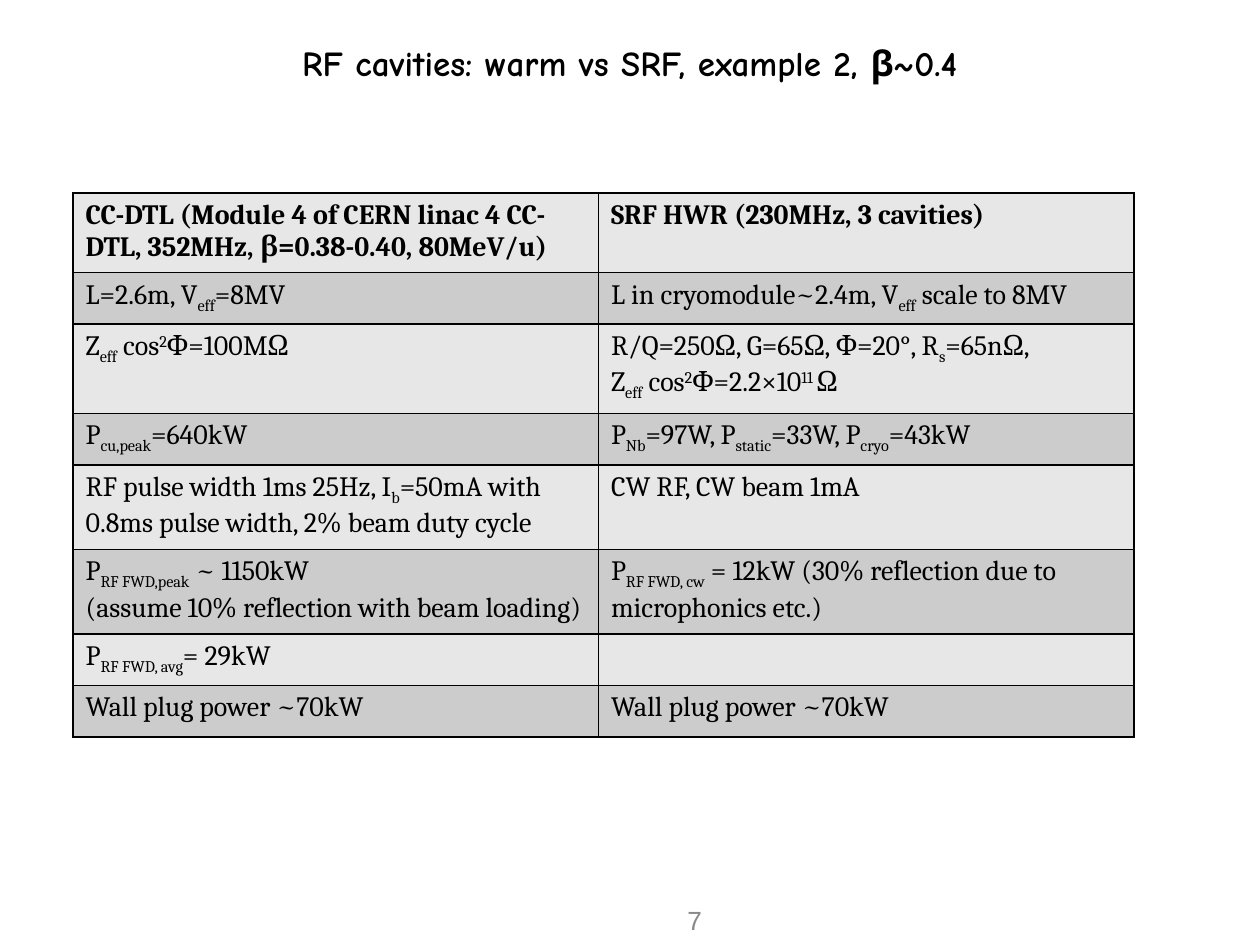
from lxml import etree
from pptx import Presentation
from pptx.dml.color import RGBColor
from pptx.enum.text import MSO_ANCHOR, MSO_AUTO_SIZE, PP_ALIGN
from pptx.oxml.ns import qn
from pptx.util import Inches, Pt

CENTER, RIGHT, LEFT = PP_ALIGN.CENTER, PP_ALIGN.RIGHT, PP_ALIGN.LEFT
MIDDLE = MSO_ANCHOR.MIDDLE
NO_AUTOFIT = MSO_AUTO_SIZE.NONE

BLACK = RGBColor(0x00, 0x00, 0x00)
GRAY = RGBColor(0x89, 0x89, 0x89)
BANDS = (RGBColor(0xE7, 0xE7, 0xE7), RGBColor(0xCC, 0xCC, 0xCC))

COLUMN_WIDTHS = (4.17, 4.25)
ROW_HEIGHT = 0.41
BASELINES = {"_": "-25000", "^": "30000"}

# Left column: warm cavity; right column: superconducting cavity.
# _{...} is a subscript, ^{...} a superscript, a line break a new paragraph.
COMPARISON = [
    ("CC-DTL (Module 4 of CERN linac 4 CC-DTL, 352MHz, β=0.38-0.40, 80MeV/u)",
     "SRF HWR (230MHz, 3 cavities)"),
    ("L=2.6m, V_{eff}=8MV",
     "L in cryomodule~2.4m, V_{eff} scale to 8MV"),
    ("Z_{eff} cos^{2}Φ=100MΩ",
     "R/Q=250Ω, G=65Ω, Φ=20°, R_{s}=65nΩ,\n"
     "Z_{eff} cos^{2}Φ=2.2×10^{11 }Ω"),
    ("P_{cu,peak}=640kW",
     "P_{Nb}=97W, P_{static}=33W, P_{cryo}=43kW"),
    ("RF pulse width 1ms 25Hz, I_{b}=50mA with 0.8ms pulse width, "
     "2% beam duty cycle",
     "CW RF, CW beam 1mA"),
    ("P_{RF FWD,peak} ~ 1150kW\n(assume 10% reflection with beam loading)",
     "P_{RF FWD, cw} = 12kW (30% reflection due to microphonics etc.)"),
    ("P_{RF FWD, avg}= 29kW", ""),
    ("Wall plug power ~70kW", "Wall plug power ~70kW"),
]


def split_scripts(line):
    """Yield (text, baseline) pieces of a line with _{} and ^{} marks."""
    baseline = None
    for i, piece in enumerate(line.replace("}", "{").split("{")):
        if i % 2:
            yield piece, baseline
        else:
            baseline = BASELINES.get(piece[-1:])
            plain = piece[:-1] if baseline else piece
            if plain:
                yield plain, None


def write_text(frame, text, font="Cambria", size=16, color=BLACK, bold=False,
               align=LEFT):
    for i, line in enumerate(text.split("\n")):
        paragraph = frame.paragraphs[0] if i == 0 else frame.add_paragraph()
        paragraph.alignment = align
        for piece, baseline in split_scripts(line):
            run = paragraph.add_run()
            run.text = piece
            run.font.name = font
            run.font.size = Pt(size)
            run.font.bold = bold
            run.font.color.rgb = color
            if baseline:
                run.font._element.set("baseline", baseline)


def add_borders(cell, color=BLACK, width=1):
    properties = cell._tc.get_or_add_tcPr()
    for side in ("a:lnL", "a:lnR", "a:lnT", "a:lnB"):
        line = etree.SubElement(properties, qn(side), w=str(Pt(width)))
        fill = etree.SubElement(line, qn("a:solidFill"))
        etree.SubElement(fill, qn("a:srgbClr"), val=str(color))


def add_title(slide, text):
    title = slide.shapes.title
    title.left, title.top = Inches(0.75), Inches(0)
    title.width, title.height = Inches(8.5), Inches(1)
    title.text_frame.auto_size = NO_AUTOFIT
    title.text_frame.vertical_anchor = MIDDLE
    write_text(title.text_frame, text, font="Comic Neue", size=20, bold=True,
               align=CENTER)


def add_page_number(slide, number):
    box = slide.shapes.add_textbox(Inches(4.92), Inches(7.1),
                                   Inches(0.75), Inches(0.4))
    box.text_frame.word_wrap = True
    box.text_frame.vertical_anchor = MIDDLE
    write_text(box.text_frame, number, font="Arial", size=15, color=GRAY,
               align=RIGHT)


def add_comparison(slide, rows):
    table = slide.shapes.add_table(
        len(rows), len(COLUMN_WIDTHS), Inches(0.58), Inches(1.53),
        Inches(sum(COLUMN_WIDTHS)), Inches(ROW_HEIGHT * len(rows))).table
    table.first_row = table.horz_banding = False
    for column, width in zip(table.columns, COLUMN_WIDTHS):
        column.width = Inches(width)
    for r, texts in enumerate(rows):
        table.rows[r].height = Inches(ROW_HEIGHT)
        for c, text in enumerate(texts):
            cell = table.cell(r, c)
            add_borders(cell)
            cell.fill.solid()
            cell.fill.fore_color.rgb = BANDS[r % 2]
            write_text(cell.text_frame, text, bold=r == 0)


def main():
    deck = Presentation()
    deck.slide_width, deck.slide_height = Inches(10), Inches(7.5)
    slide = deck.slides.add_slide(deck.slide_layouts[5])
    add_title(slide, "RF cavities: warm vs SRF, example 2, β~0.4")
    add_page_number(slide, "7")
    add_comparison(slide, COMPARISON)
    deck.save("out.pptx")


if __name__ == "__main__":
    main()
